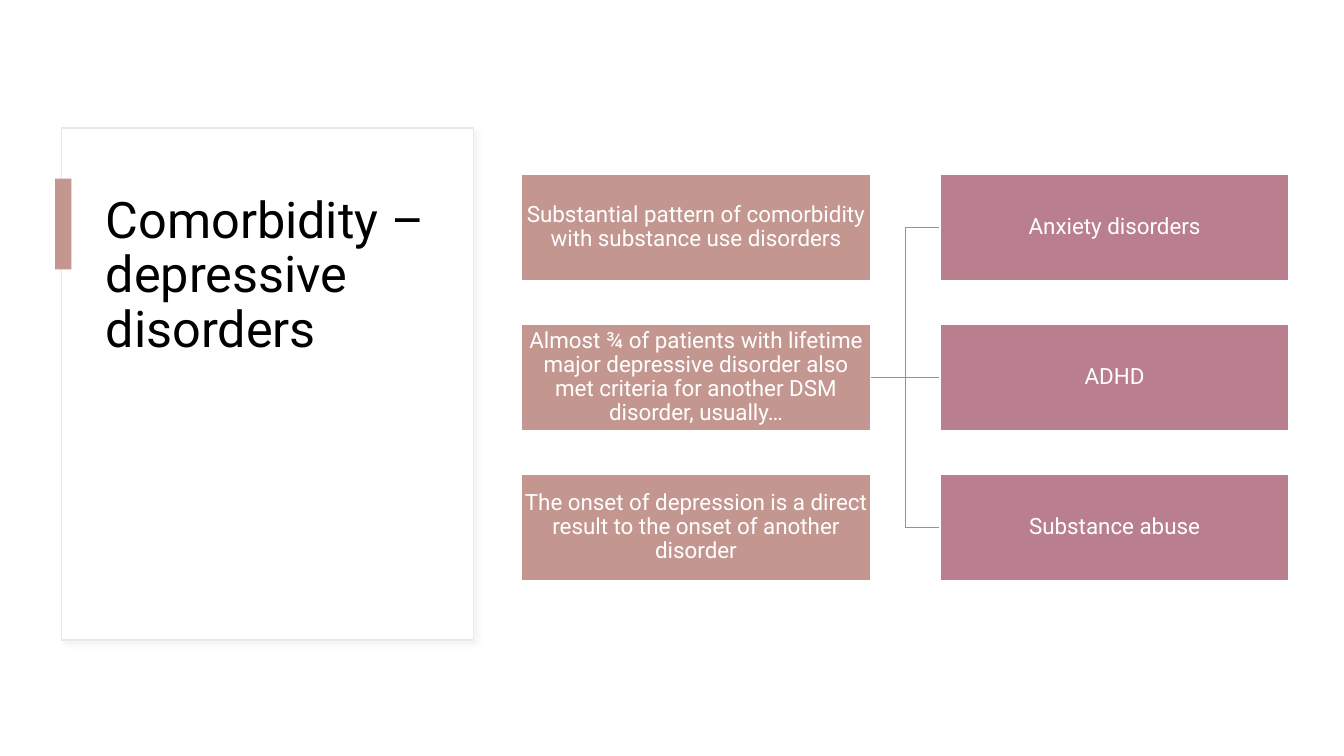
from lxml import etree
from pptx import Presentation
from pptx import util as u
from pptx.dml.color import RGBColor
from pptx.enum import shapes, text
from pptx.oxml import ns, parse_xml

# Content
TITLE = "Comorbidity – depressive disorders"
STATEMENTS = [
    "Substantial pattern of comorbidity with substance use disorders",
    "Almost ¾ of patients with lifetime major depressive disorder also "
    "met criteria for another DSM disorder, usually…",
    "The onset of depression is a direct result to the onset of another disorder",
]
DISORDERS = ["Anxiety disorders", "ADHD", "Substance abuse"]
PARENT_ROW = 1

# Colours and font
WHITE = RGBColor(0xFF, 0xFF, 0xFF)
BLACK = RGBColor(0x00, 0x00, 0x00)
CARD_EDGE = RGBColor(0xE5, 0xEA, 0xF0)
CLAY = RGBColor(0xC3, 0x97, 0x90)
MAUVE = RGBColor(0xBA, 0x7F, 0x8F)
FONT = "Roboto"

# Grid
STATEMENT_LEFT, DISORDER_LEFT = u.Cm(13.14), u.Cm(23.69)
BOX_WIDTH, BOX_HEIGHT = u.Cm(8.8), u.Cm(2.68)
FIRST_TOP, ROW_PITCH = u.Cm(4.39), u.Cm(3.78)

CARD_SHADOW = (
    f'<a:effectLst {ns.nsdecls("a")}>'
    '<a:outerShdw blurRad="50800" dist="38100" dir="2700000" algn="tl" rotWithShape="0">'
    '<a:srgbClr val="D9D9D9"><a:alpha val="30000"/></a:srgbClr>'
    '</a:outerShdw></a:effectLst>'
)


def set_all(target, values):
    for name, value in values.items():
        setattr(target, name, value)


def add_rectangle(slide, left, top, width, height, fill, line=None):
    shape = slide.shapes.add_shape(
        shapes.MSO_SHAPE.RECTANGLE, left, top, width, height)
    shape.shadow.inherit = False
    shape.fill.solid()
    shape.fill.fore_color.rgb = fill
    if line is None:
        shape.line.fill.background()
    else:
        shape.line.color.rgb = line
        shape.line.width = u.Pt(1)
    return shape


def write(shape, wording, size, color, alignment, frame_format):
    frame = shape.text_frame
    frame.text = wording
    set_all(frame, {"word_wrap": True,
                    "auto_size": text.MSO_AUTO_SIZE.NONE, **frame_format})
    paragraph = frame.paragraphs[0]
    set_all(paragraph, {"alignment": alignment, "line_spacing": 0.9})
    font = paragraph.runs[0].font
    set_all(font, {"name": FONT, "size": u.Pt(size)})
    font.color.rgb = color


def add_column(slide, wordings, left, fill):
    inset = u.Cm(0.03)
    margins = {f"margin_{side}": inset
               for side in ("left", "top", "right", "bottom")}
    boxes = []
    for row, wording in enumerate(wordings):
        box = add_rectangle(slide, left, FIRST_TOP + row * ROW_PITCH,
                            BOX_WIDTH, BOX_HEIGHT, fill, WHITE)
        write(box, wording, 16, WHITE, text.PP_ALIGN.CENTER,
              {"vertical_anchor": text.MSO_ANCHOR.MIDDLE, **margins})
        boxes.append(box)
    return boxes


def add_branch(slide, row):
    kind = (shapes.MSO_CONNECTOR.STRAIGHT if row == PARENT_ROW
            else shapes.MSO_CONNECTOR.ELBOW)
    middle = FIRST_TOP + BOX_HEIGHT // 2
    branch = slide.shapes.add_connector(
        kind, STATEMENT_LEFT + BOX_WIDTH, middle + PARENT_ROW * ROW_PITCH,
        DISORDER_LEFT, middle + row * ROW_PITCH)
    branch.line.color.rgb = MAUVE
    branch.line.width = u.Pt(1)
    etree.SubElement(branch.element.spPr, ns.qn("a:effectLst"))
    return branch


def main():
    presentation = Presentation()
    presentation.slide_width, presentation.slide_height = u.Cm(33.87), u.Cm(19.05)
    slide = presentation.slides.add_slide(presentation.slide_layouts[5])

    # Title card with its accent bar
    card = add_rectangle(slide, u.Cm(1.55), u.Cm(3.23), u.Cm(10.39), u.Cm(12.9),
                         WHITE, CARD_EDGE)
    properties = card.element.spPr
    properties.replace(properties.find(ns.qn("a:effectLst")), parse_xml(CARD_SHADOW))
    title = slide.shapes.title
    set_all(title, {"left": u.Cm(2.41), "top": u.Cm(4.78),
                    "width": u.Cm(8.61), "height": u.Cm(9.78)})
    write(title, TITLE, 36, BLACK, text.PP_ALIGN.LEFT,
          {"vertical_anchor": text.MSO_ANCHOR.TOP})
    card.element.addnext(title.element)
    add_rectangle(slide, u.Cm(1.39), u.Cm(4.5), u.Cm(0.41), u.Cm(2.29), CLAY)

    # Branches lie behind the boxes they join
    branches = [add_branch(slide, row) for row in range(len(DISORDERS))]
    statements = add_column(slide, STATEMENTS, STATEMENT_LEFT, CLAY)
    disorders = add_column(slide, DISORDERS, DISORDER_LEFT, MAUVE)
    for branch, disorder in zip(branches, disorders):
        branch.begin_connect(statements[PARENT_ROW], 3)
        branch.end_connect(disorder, 1)

    presentation.save("out.pptx")


if __name__ == "__main__":
    main()
